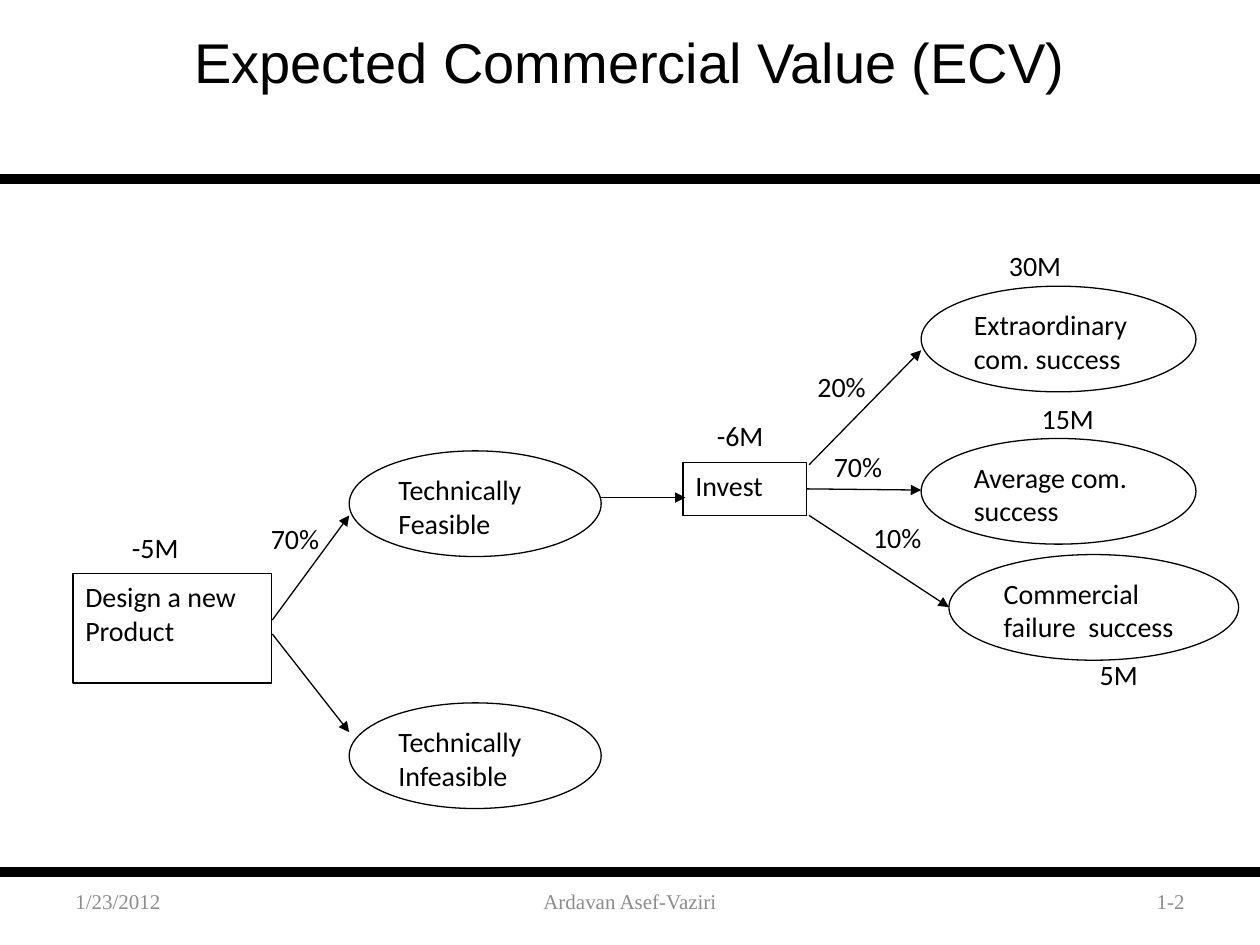
from lxml.etree import SubElement as Sub
from pptx import Presentation
from pptx.dml.color import RGBColor as Rgb
from pptx.enum.shapes import MSO_CONNECTOR as Link, MSO_SHAPE as Kind
from pptx.enum.text import MSO_ANCHOR as Anchor, PP_ALIGN as Align
from pptx.oxml.ns import qn
from pptx.util import Cm, Pt

HUE = {"ink": "000000", "paper": "FFFFFF", "gray": "8C8C8C"}
TAG = (2.01, 1.09)
OVAL = 2.13


def color(name):
    return Rgb.from_string(HUE[name])


def place(box, x, y):
    return Cm(box[0] + x), Cm(box[1] + y)


def write(shape, text, face, size, hue="ink", align=Align.LEFT, anchor=Anchor.TOP):
    frame = shape.text_frame
    frame.word_wrap = True
    frame.vertical_anchor = anchor
    para = frame.paragraphs[0]
    para.text = text
    para.alignment = align
    font = para.runs[0].font
    font.name, font.size = face, Pt(size)
    font.color.rgb = color(hue)
    return para


def note(slide, box, x, y, wide, high, *style):
    area = slide.shapes.add_textbox(*place(box, x, y), Cm(wide), Cm(high))
    write(area, *style)


def node(slide, box, kind, x, y, wide, high, text, edge=True):
    shape = slide.shapes.add_shape(kind, *place(box, x, y), Cm(wide), Cm(high))
    shape.shadow.inherit = False
    shape.fill.solid()
    shape.fill.fore_color.rgb = color("paper")
    if edge:
        shape.line.color.rgb = color("ink")
        shape.line.width = Pt(0.75)
    else:
        shape.line.fill.background()
    write(shape, text, "Calibri", 16).space_after = Pt(10)
    return shape


def label(slide, box, x, y, text):
    node(slide, box, Kind.RECTANGLE, x, y, *TAG, text, edge=False)


def rule(slide, box, start, end, width=0.75, head=True):
    line = slide.shapes.add_connector(
        Link.STRAIGHT, *place(box, *start), *place(box, *end))
    line.line.color.rgb = color("ink")
    line.line.width = Pt(width)
    if head:
        Sub(line.line._get_or_add_ln(), qn("a:tailEnd"), type="triangle")
    Sub(line._element.spPr, qn("a:effectLst"))
    return line


def header(slide, box):
    left, top, wide, high = box
    rule(slide, box, (0, high), (wide, high), 6, False)
    note(slide, box, 1.27, 0.43, wide - 2.54, 3.18,
         "Expected Commercial Value (ECV)", "Arial", 32, "ink", Align.CENTER)


def footer(slide, box):
    left, top, wide, high = box
    rule(slide, box, (0, 0), (wide, 0), 6, False)
    parts = [
        (1.27, 5.92, "1/23/2012", Align.LEFT),
        (8.68, 8.04, "Ardavan Asef-Vaziri", Align.CENTER),
        (18.21, 5.92, "1-2", Align.RIGHT),
    ]
    for x, span, text, align in parts:
        note(slide, box, x, 0.08, span, 1.01, text,
             "Times New Roman", 12, "gray", align, Anchor.MIDDLE)


def market(slide, box):
    tags = [
        (2.79, 4.06, "70%"), (2.46, 2.44, "20%"), (3.58, 5.48, "10%"),
        (8.15, 8.25, "5M"), (6.98, 3.1, "15M"), (6.32, 0, "30M"),
        (0.43, 3.43, "-6M"),
    ]
    for tag in tags:
        label(slide, box, *tag)
    ends = [
        (4.8, 0.89, 5.54, "Extraordinary com. success"),
        (4.8, 3.96, 5.54, "Average com. success"),
        (5.36, 6.3, 5.84, "Commercial failure  success"),
    ]
    for x, y, wide, text in ends:
        node(slide, box, Kind.OVAL, x, y, wide, OVAL, text)
    invest = node(slide, box, Kind.RECTANGLE, 0, 4.44, 2.49, 1.07, "Invest")
    rule(slide, box, (2.54, 4.49), (4.8, 2.18))
    rule(slide, box, (2.54, 5), (4.8, 5)).begin_connect(invest, 3)
    rule(slide, box, (2.54, 5.51), (5.36, 7.36))


def design(slide, box):
    label(slide, box, 0.94, 1.48, "-5M")
    label(slide, box, 3.74, 1.3, "70%")
    node(slide, box, Kind.RECTANGLE, 0, 2.47, 4.01, 2.21, "Design a new Product")
    for y, text in [(0, "Technically Feasible"), (5.08, "Technically Infeasible")]:
        node(slide, box, Kind.OVAL, 5.57, y, 5.08, OVAL, text)
    rule(slide, box, (4.02, 3.41), (5.57, 1.3))
    rule(slide, box, (4.02, 3.69), (5.57, 5.67))
    rule(slide, box, (10.65, 0.94), (12.35, 0.94))


def main():
    deck = Presentation()
    deck.slide_width, deck.slide_height = Cm(25.4), Cm(19.05)
    slide = deck.slides.add_slide(deck.slide_layouts[6])
    header(slide, (0, 0, 25.4, 3.61))
    footer(slide, (0, 17.58, 25.4, 1.47))
    market(slide, (13.77, 4.88))
    design(slide, (1.47, 9.09))
    deck.save("out.pptx")


if __name__ == "__main__":
    main()
